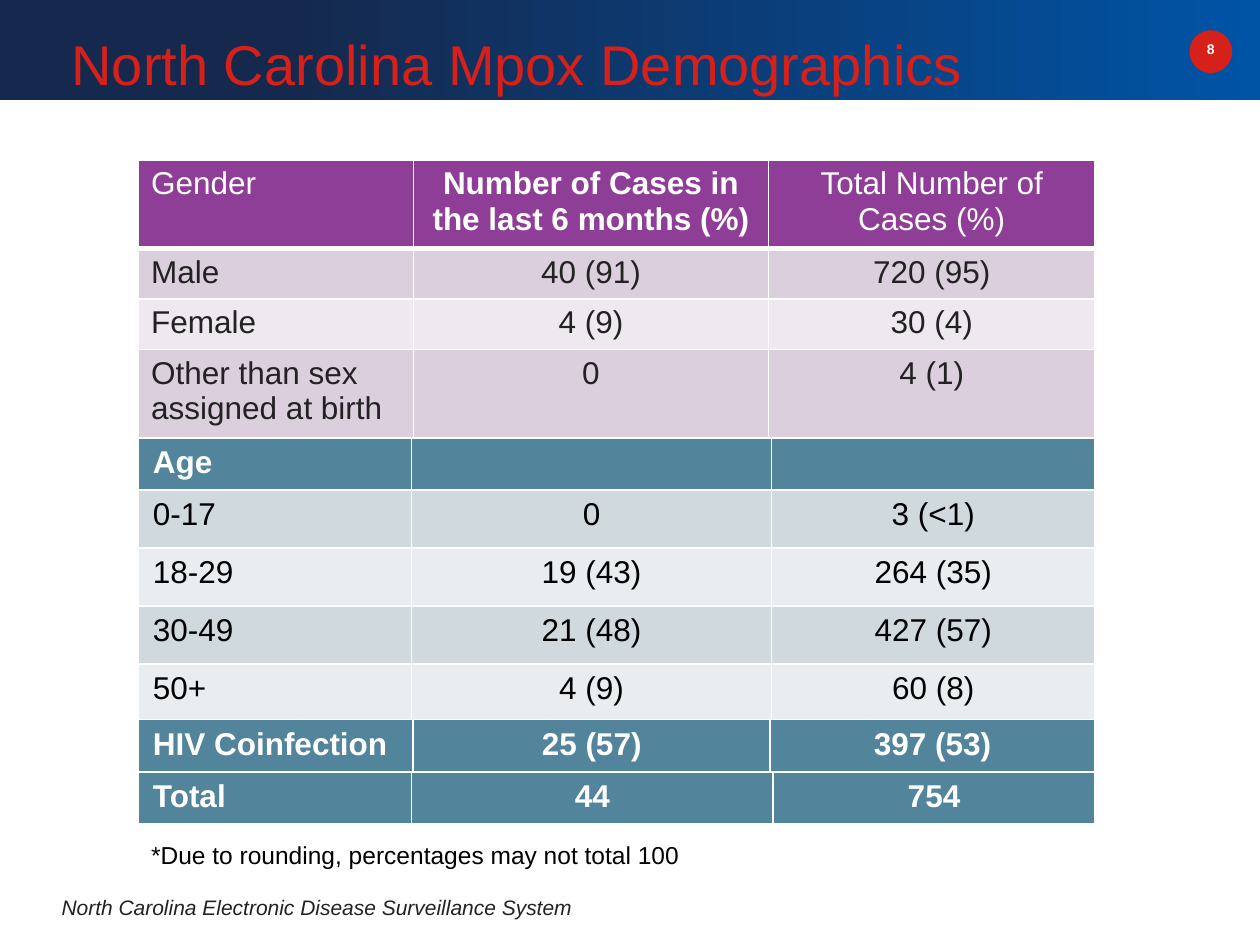
from lxml import etree
from pptx import Presentation
from pptx import util as u
from pptx.dml.color import RGBColor
from pptx.enum import shapes, text
from pptx.oxml import ns

Pt = u.Pt
NAVY = RGBColor(0x15, 0x29, 0x4E)
BLUE = RGBColor(0x00, 0x54, 0xA6)
RED = RGBColor(0xD6, 0x20, 0x1A)
WHITE = RGBColor(0xFF, 0xFF, 0xFF)
BLACK = RGBColor(0x00, 0x00, 0x00)
INK = RGBColor(0x22, 0x22, 0x22)
PLUM = RGBColor(0x8F, 0x3E, 0x97)
LILAC = RGBColor(0xDB, 0xCE, 0xDD)
PALE = RGBColor(0xEE, 0xE8, 0xEF)
TEAL = RGBColor(0x52, 0x84, 0x9C)
MIST = RGBColor(0xD0, 0xD9, 0xDE)
FOG = RGBColor(0xE9, 0xED, 0xEF)
MID = text.PP_ALIGN.CENTER
LEFT = text.PP_ALIGN.LEFT


def write(frame, words, size, color, bold=False, italic=False, align=LEFT):
    para = frame.paragraphs[0]
    para.alignment = align
    run = para.add_run()
    run.text = words
    font = run.font
    font.name, font.size = "Arial", Pt(size)
    font.bold, font.italic = bold, italic
    font.color.rgb = color


def label(slide, box, words, size, color, anchor=text.MSO_ANCHOR.TOP, **look):
    frame = slide.shapes.add_textbox(*map(Pt, box)).text_frame
    frame.word_wrap = True
    frame.vertical_anchor = anchor
    write(frame, words, size, color, **look)


def plain(slide, kind, box):
    shape = slide.shapes.add_shape(kind, *map(Pt, box))
    shape.shadow.inherit = False
    shape.line.fill.background()
    return shape


def banner(slide, box):
    left, top, width, height = box
    fill = plain(slide, shapes.MSO_SHAPE.RECTANGLE, box).fill
    fill.gradient()
    fill.gradient_angle = 0
    for stop, place, color in zip(fill.gradient_stops, (0.23, 1), (NAVY, BLUE)):
        stop.position = place
        stop.color.rgb = color
    dot = plain(slide, shapes.MSO_SHAPE.OVAL, (left + width - 40.3, top + 17.3, 24.5, 24.5))
    dot.fill.solid()
    dot.fill.fore_color.rgb = RED
    label(slide, (left + width - 40.3, top + 19.4, 24.5, 17.3), "8", 8, WHITE, bold=True, align=MID)
    label(slide, (left + 33.8, top + 10.8, 638, 51), "North Carolina Mpox Demographics",
          32, RED, text.MSO_ANCHOR.MIDDLE)


def edge(cell, side, width):
    line = etree.SubElement(cell._tc.get_or_add_tcPr(), ns.qn("a:ln" + side), w=str(Pt(width)))
    fill = etree.SubElement(line, ns.qn("a:solidFill"))
    etree.SubElement(fill, ns.qn("a:srgbClr"), val=str(WHITE))


def grid(slide, box, cols, rows, data, fills, inks, bolds, pad, rule=1, head=1):
    frame = slide.shapes.add_table(len(rows), len(cols), *map(Pt, box))
    table = frame.table
    for col, width in zip(table.columns, cols):
        col.width = Pt(width)
    for r, (row, height) in enumerate(zip(table.rows, rows)):
        row.height = Pt(height)
        for c, cell in enumerate(row.cells):
            cell.margin_left = cell.margin_right = Pt(pad[0])
            cell.margin_top = cell.margin_bottom = Pt(pad[1])
            for side in "LRTB":
                edge(cell, side, head if side == "B" and r == 0 else rule)
            cell.fill.solid()
            cell.fill.fore_color.rgb = fills[r]
            if data[r][c]:
                write(cell.text_frame, data[r][c], 18, inks[r],
                      bolds[r][c], align=MID if c else LEFT)


def gender(slide, box):
    data = [("Gender", "Number of Cases in the last 6 months (%)", "Total Number of Cases (%)"),
            ("Male", "40 (91)", "720 (95)"),
            ("Female", "4 (9)", "30 (4)"),
            ("Other than sex assigned at birth", "0", "4 (1)")]
    grid(slide, box, (157, 203, 186.5), (50.7, 27.4, 27.4, 47.3), data,
         (PLUM, LILAC, PALE, LILAC), (WHITE, INK, INK, INK),
         [(False, True, False)] + [(False,) * 3] * 3, (7.2, 3.6), head=3)


def age(slide, box):
    data = [("Age", "", ""),
            ("0-17", "0", "3 (<1)"),
            ("18-29", "19 (43)", "264 (35)"),
            ("30-49", "21 (48)", "427 (57)"),
            ("50+", "4 (9)", "60 (8)")]
    grid(slide, box, (156, 205.7, 184.8), [27.7] + [33.15] * 4, data,
         [TEAL] + [MIST, FOG] * 2, [WHITE] + [BLACK] * 4,
         [(True,) * 3] + [(False,) * 3] * 4, (8.2, 4), rule=1.14)


def strip(slide, box, cols, row):
    grid(slide, box, cols, [box[3]], [row], [TEAL], [WHITE], [(True,) * 3], (8.2, 4), rule=1.14)


def notes(slide, left, top):
    label(slide, (left + 51.1, top, 474.5, 24.2),
          "*Due to rounding, percentages may not total 100", 14, BLACK)
    label(slide, (left, top + 31, 388, 21.8),
          "North Carolina Electronic Disease Surveillance System", 12, INK, italic=True)


def main():
    deck = Presentation()
    deck.slide_width, deck.slide_height = Pt(720), Pt(540)
    slide = deck.slides.add_slide(deck.slide_layouts[6])
    left, width = 79.2, 546.5
    banner(slide, (0, 0, 720, 57.3))
    gender(slide, (left, 91.4, width, 152.8))
    age(slide, (left, 250.4, width, 160.3))
    strip(slide, (left, 411.2, width, 27.8), (157, 203.8, 185.7),
          ("HIV Coinfection", "25 (57)", "397 (53)"))
    strip(slide, (left, 441, width, 27.8), (156, 206.6, 183.9), ("Total", "44", "754"))
    notes(slide, 28.1, 476.6)
    deck.save("out.pptx")


if __name__ == "__main__":
    main()
